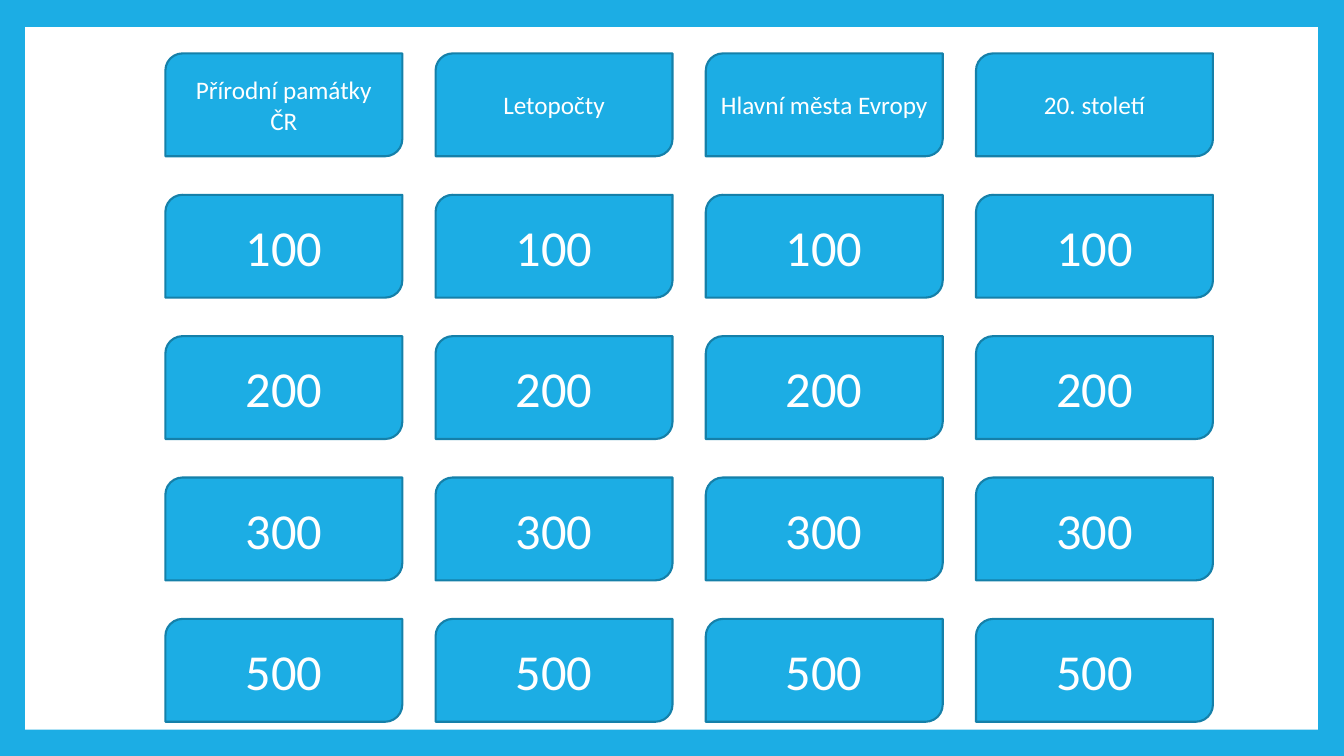
from pptx import Presentation
from pptx import util as u
from pptx.dml import color
from pptx.enum import shapes, text

COLORS = {"blue": "1CADE4", "outline": "1580A9", "white": "FFFFFF"}
FONT = "Calibri"
CATEGORIES = ["Přírodní památky ČR", "Letopočty", "Hlavní města Evropy", "20. století"]
POINTS = ["100", "200", "300", "500"]
TILE_WIDTH, TILE_HEIGHT = 2.35, 1.02


def rgb(name):
    return color.RGBColor.from_string(COLORS[name])


def add_box(page, kind, box, fill):
    shape = page.shapes.add_shape(kind, *(u.Inches(length) for length in box))
    shape.shadow.inherit = False
    shape.fill.solid()
    shape.fill.fore_color.rgb = rgb(fill)
    return shape


def add_panel(page, box):
    """Blue page with a white panel that leaves a border around it."""
    page.background.fill.solid()
    page.background.fill.fore_color.rgb = rgb("blue")
    add_box(page, shapes.MSO_SHAPE.RECTANGLE, box, "white").line.fill.background()


def add_tile(page, box, label, size):
    tile = add_box(page, shapes.MSO_SHAPE.ROUND_2_DIAG_RECTANGLE, box, "blue")
    tile.line.color.rgb = rgb("outline")
    tile.line.width = u.Pt(1.5)
    frame = tile.text_frame
    frame.word_wrap = True
    frame.vertical_anchor = text.MSO_ANCHOR.MIDDLE
    para = frame.paragraphs[0]
    para.alignment = text.PP_ALIGN.CENTER
    span = para.add_run()
    span.text = label
    span.font.name = FONT
    span.font.size = u.Pt(size)
    span.font.color.rgb = rgb("white")


def add_board(page, box):
    """Quiz grid: a row of categories above rows of point values."""
    left, top, width, height = box
    column_step = (width - TILE_WIDTH) / (len(CATEGORIES) - 1)
    row_step = (height - TILE_HEIGHT) / len(POINTS)
    for column, category in enumerate(CATEGORIES):
        for row, label in enumerate([category] + POINTS):
            place = (left + column * column_step, top + row * row_step,
                     TILE_WIDTH, TILE_HEIGHT)
            add_tile(page, place, label, 36 if row else 18)


def main():
    deck = Presentation()
    deck.slide_width, deck.slide_height = u.Inches(13.33), u.Inches(7.5)
    page = deck.slides.add_slide(deck.slide_layouts[6])
    add_panel(page, (0.25, 0.27, 12.82, 6.97))
    add_board(page, (1.64, 0.53, 10.39, 6.63))
    deck.save("out.pptx")


if __name__ == "__main__":
    main()
